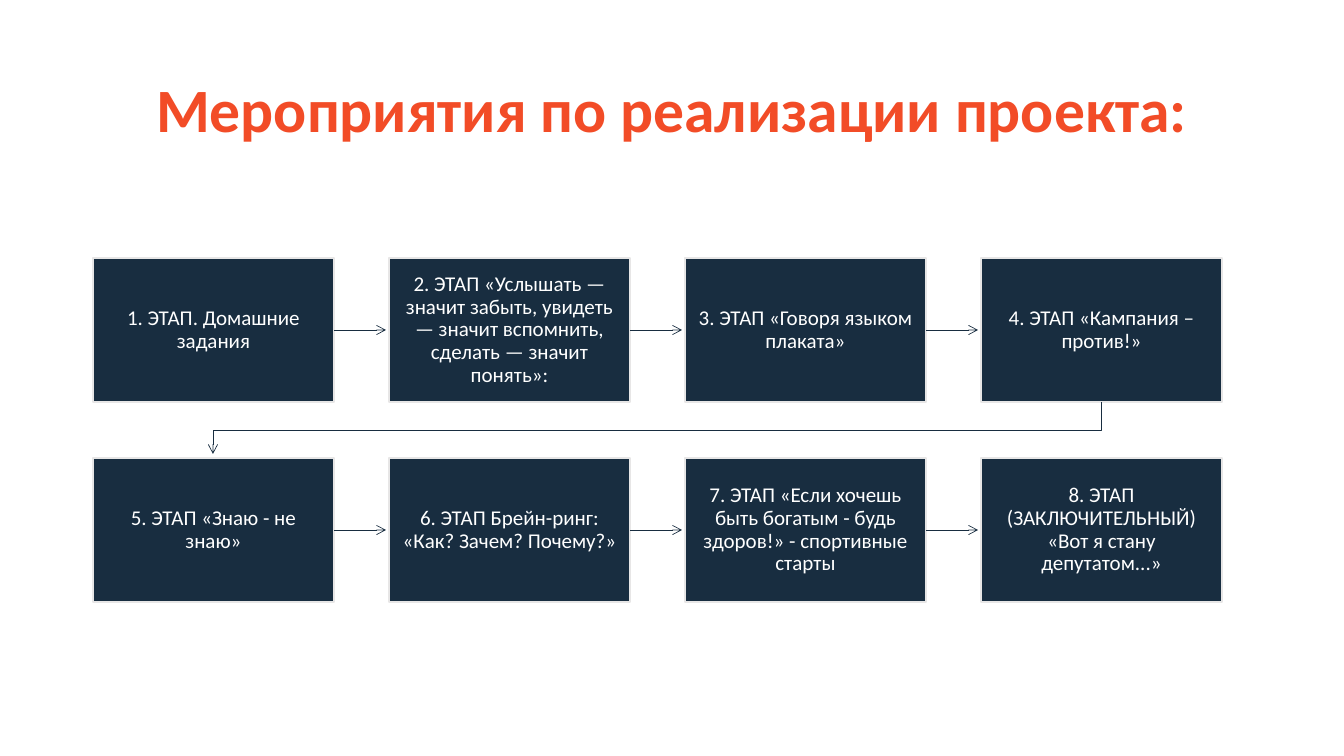
from lxml import etree
from pptx import Presentation
from pptx import util as u
from pptx.dml.color import RGBColor
from pptx.enum import shapes, text
from pptx.oxml.ns import qn

PX = 914400 / 100.8
FONT = "Calibri"
COLORS = {"title": "F24C27", "box": "182D40", "edge": "E7E6E6", "label": "FFFFFF"}

LEFT, TOP = 93, 258
BOX_W, BOX_H = 241, 144
COL_STEP, ROW_STEP = 296, 200
COLUMNS = 4
ARROW = 52
INSET = 12

TITLE = "Мероприятия по реализации проекта:"
STAGES = [
    "1. ЭТАП. Домашние задания",
    "2. ЭТАП «Услышать — значит забыть, увидеть — значит вспомнить, "
    "сделать — значит понять»:",
    "3. ЭТАП «Говоря языком плаката»",
    "4. ЭТАП «Кампания – против!»",
    "5. ЭТАП «Знаю - не знаю»",
    "6. ЭТАП Брейн-ринг: «Как? Зачем? Почему?»",
    "7. ЭТАП «Если хочешь быть богатым - будь здоров!» - спортивные старты",
    "8. ЭТАП (ЗАКЛЮЧИТЕЛЬНЫЙ) «Вот я стану депутатом...»",
]


def px(n):
    return u.Emu(round(n * PX))


def color(name):
    return RGBColor.from_string(COLORS[name])


def set_text(sp, content, size, color_name, bold=False):
    tf = sp.text_frame
    tf.text = content
    tf.word_wrap = True
    tf.auto_size = text.MSO_AUTO_SIZE.NONE
    tf.vertical_anchor = text.MSO_ANCHOR.MIDDLE
    p = tf.paragraphs[0]
    p.alignment = text.PP_ALIGN.CENTER
    p.line_spacing = 0.9
    font = p.runs[0].font
    font.name, font.size, font.bold = FONT, u.Pt(size), bold
    font.color.rgb = color(color_name)


def add_title(s):
    sp = s.shapes.title
    sp.left, sp.top, sp.width, sp.height = px(93), px(40), px(1159), px(146)
    set_text(sp, TITLE, 44, "title", bold=True)


def add_stage(s, x, y, label):
    sp = s.shapes.add_shape(shapes.MSO_SHAPE.RECTANGLE, px(x), px(y), px(BOX_W), px(BOX_H))
    sp.shadow.inherit = False
    sp.fill.solid()
    sp.fill.fore_color.rgb = color("box")
    sp.line.color.rgb = color("edge")
    sp.line.width = u.Pt(1)
    tf = sp.text_frame
    tf.margin_left = tf.margin_right = tf.margin_top = tf.margin_bottom = px(INSET)
    set_text(sp, label, 15, "label")
    return sp


def style_arrow(line):
    line.color.rgb = color("box")
    line.width = u.Pt(0.5)
    etree.SubElement(line._get_or_add_ln(), qn("a:tailEnd"), type="arrow")


def add_arrow(s, box, x, y):
    """Draw a short arrow from the right side of a box, starting at x, y."""
    arrow = s.shapes.add_connector(
        shapes.MSO_CONNECTOR.STRAIGHT, px(x), px(y), px(x + ARROW), px(y))
    arrow.begin_connect(box, 3)
    style_arrow(arrow.line)
    etree.SubElement(arrow._element.spPr, qn("a:effectLst"))


def add_row_turn(s, x, y):
    """Draw the bent arrow from the bottom of a row's last box to the next row."""
    start_x = LEFT + BOX_W // 2
    middle = y + (ROW_STEP - BOX_H) // 2
    builder = s.shapes.build_freeform(x, y, scale=PX)
    builder.add_line_segments(
        [(x, middle), (start_x, middle), (start_x, y + ARROW)], close=False)
    turn = builder.convert_to_shape()
    turn.shadow.inherit = False
    turn.fill.background()
    style_arrow(turn.line)


def add_flow(s):
    for i, label in enumerate(STAGES):
        row, col = divmod(i, COLUMNS)
        x, y = LEFT + col * COL_STEP, TOP + row * ROW_STEP
        box = add_stage(s, x, y, label)
        if i == len(STAGES) - 1:
            continue
        if col < COLUMNS - 1:
            add_arrow(s, box, x + BOX_W, y + BOX_H // 2)
        else:
            add_row_turn(s, x + BOX_W // 2, y + BOX_H)


def main():
    prs = Presentation()
    prs.slide_width, prs.slide_height = px(1344), px(756)
    s = prs.slides.add_slide(prs.slide_layouts[5])
    add_title(s)
    add_flow(s)
    prs.save("out.pptx")


if __name__ == "__main__":
    main()
